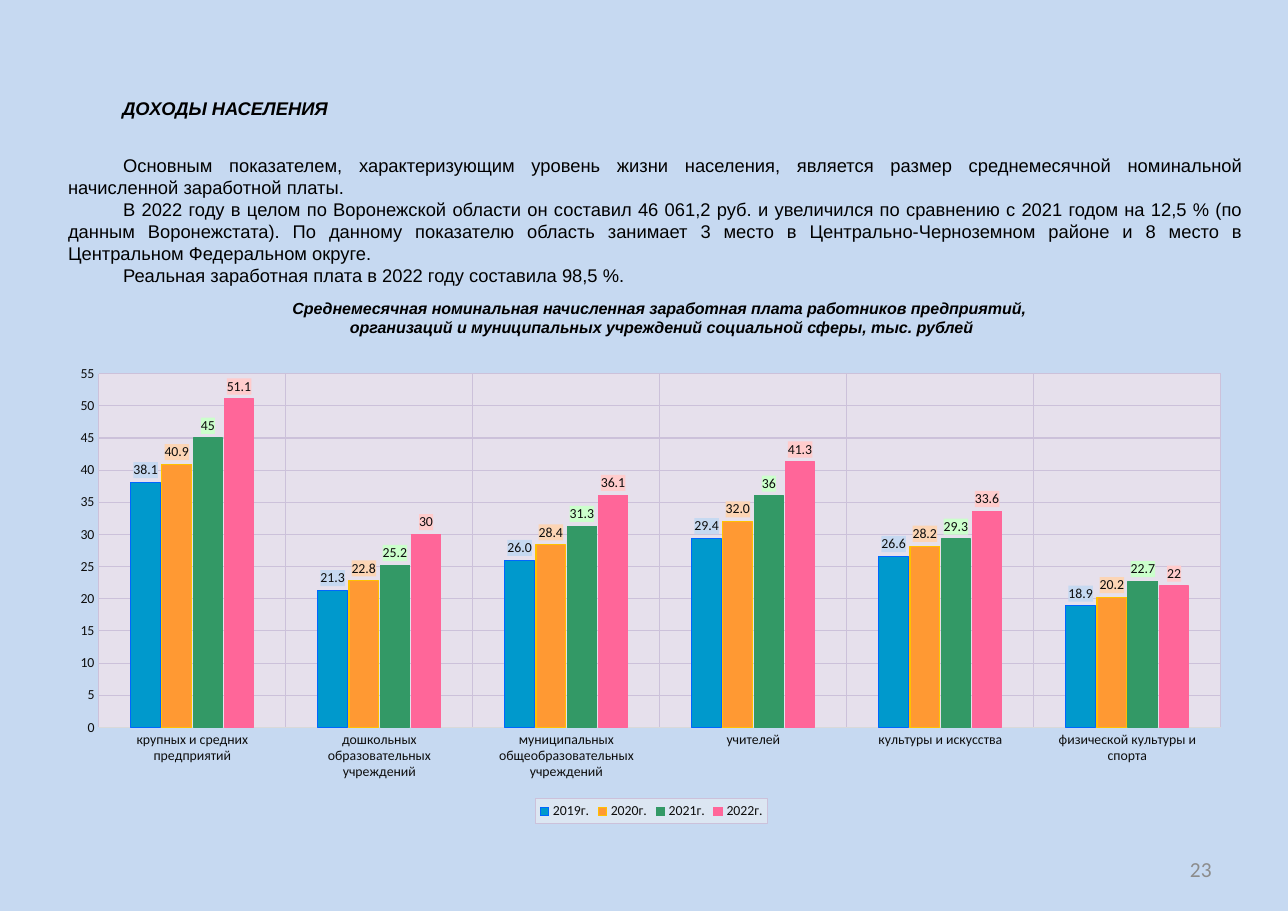
from lxml.etree import SubElement
from pptx import Presentation
from pptx.chart.data import CategoryChartData
from pptx.dml.color import RGBColor
from pptx.enum.chart import XL_CHART_TYPE, XL_LABEL_POSITION, XL_LEGEND_POSITION, XL_TICK_MARK
from pptx.enum.text import MSO_ANCHOR, MSO_AUTO_SIZE, PP_ALIGN
from pptx.oxml import parse_xml
from pptx.oxml.ns import nsdecls, qn
from pptx.util import Cm, Pt

GRID = "CCC1DA"
HEADING = "ДОХОДЫ НАСЕЛЕНИЯ"
BODY = [
    "Основным показателем, характеризующим уровень жизни населения, является размер "
    "среднемесячной номинальной начисленной заработной платы.",
    "В 2022 году в целом по Воронежской области он составил 46 061,2 руб. и увеличился "
    "по сравнению с 2021 годом на 12,5 % (по данным Воронежстата). По данному показателю "
    "область занимает 3 место в Центрально-Черноземном районе и 8 место в Центральном "
    "Федеральном округе.",
    "Реальная заработная плата в 2022 году составила 98,5 %.",
]
CHART_TITLE = [
    "Среднемесячная номинальная начисленная заработная плата работников предприятий, ",
    "организаций и муниципальных учреждений социальной сферы, тыс. рублей",
]
WORKER_GROUPS = [
    "крупных и средних предприятий",
    "дошкольных образовательных учреждений",
    "муниципальных общеобразовательных учреждений",
    "учителей",
    "культуры и искусства",
    "физической культуры и спорта",
]
YEARS = [
    ("2019г.", [38.1, 21.3, 26, 29.4, 26.6, 18.9], "0099CC", "0066FF", "C6D9F1", "0.0"),
    ("2020г.", [40.9, 22.8, 28.4, 32, 28.2, 20.2], "FF9933", "FFC000", "FCD5B5", "0.0"),
    ("2021г.", [45, 25.2, 31.3, 36, 29.3, 22.7], "339966", "339966", "CCFFCC", "General"),
    ("2022г.", [51.1, 30, 36.1, 41.3, 33.6, 22], "FF6699", "FF6699", "FFCCCC", "General"),
]


def rgb(value):
    """Turn a hex string into a colour."""
    return RGBColor.from_string(value)


def set_values(target, values):
    """Set every attribute named in a dict."""
    for name, value in values.items():
        setattr(target, name, value)


def set_font(font, size, color, face, **style):
    """Give a font its size, colour, face and style."""
    set_values(font, {"size": Pt(size), "name": face, **style})
    font.color.rgb = rgb(color)


def set_line(line, color):
    """Draw a thin line in one colour."""
    line.color.rgb = rgb(color)
    line.width = Pt(0.75)


def add_text(slide, box, paragraphs, size, color="000000", face="Arial",
             align=PP_ALIGN.LEFT, indent=0, frame=None, **style):
    """Add a text box with one paragraph per string."""
    text = slide.shapes.add_textbox(*map(Cm, box)).text_frame
    set_values(text, {"word_wrap": True, **(frame or {})})
    text.text = "\n".join(paragraphs)
    for paragraph in text.paragraphs:
        paragraph.alignment = align
        paragraph._p.get_or_add_pPr().set("indent", str(Cm(indent)))
        set_font(paragraph.runs[0].font, size, color, face, **style)


def paint(part, fill, line=None):
    """Fill a chart part that has no public format object."""
    outline = (f'<a:ln w="{Pt(0.75)}"><a:solidFill><a:srgbClr val="{line}"/></a:solidFill></a:ln>'
               if line else "")
    shape_format = parse_xml(
        f'<c:spPr {nsdecls("c", "a")}><a:solidFill><a:srgbClr val="{fill}"/></a:solidFill>'
        f"{outline}</c:spPr>")
    text_format = part.find(qn("c:txPr"))
    if text_format is None:
        part.append(shape_format)
    else:
        text_format.addprevious(shape_format)


def place_plot(plot_area, **position):
    """Fix the inner plot area as fractions of the chart."""
    for automatic in plot_area.findall(qn("c:layout")):
        plot_area.remove(automatic)
    layout = parse_xml(f'<c:layout {nsdecls("c")}/>')
    manual = SubElement(layout, qn("c:manualLayout"))
    settings = {"layoutTarget": "inner", "xMode": "edge", "yMode": "edge", **position}
    for name, value in settings.items():
        SubElement(manual, qn(f"c:{name}")).set("val", str(value))
    plot_area.insert(0, layout)


def format_axes(chart):
    """Style both axes and their gridlines."""
    for axis in (chart.category_axis, chart.value_axis):
        set_values(axis, {"has_major_gridlines": True, "major_tick_mark": XL_TICK_MARK.NONE,
                          "minor_tick_mark": XL_TICK_MARK.NONE})
        set_line(axis.major_gridlines.format.line, GRID)
        set_font(axis.tick_labels.font, 9, "0D0D0D", "Calibri")
    set_line(chart.category_axis.format.line, "D9D9D9")
    wages = chart.value_axis
    set_values(wages, {"minimum_scale": 0, "maximum_scale": 55, "major_unit": 5})
    set_values(wages.tick_labels, {"number_format": "0", "number_format_is_linked": False})
    wages.format.line.fill.background()


def format_years(chart):
    """Colour the bars and labels of each year."""
    for series, (_, _, fill, line, label_fill, number_format) in zip(chart.plots[0].series, YEARS):
        series.format.fill.solid()
        series.format.fill.fore_color.rgb = rgb(fill)
        set_line(series.format.line, line)
        labels = series.data_labels
        set_values(labels, {"show_value": True, "position": XL_LABEL_POSITION.OUTSIDE_END,
                            "number_format": number_format, "number_format_is_linked": False})
        set_font(labels.font, 9, "0D0D0D", "Calibri")
        paint(labels._element, label_fill)


def add_wage_chart(slide, box):
    """Add the clustered columns of wages by year."""
    wages = CategoryChartData()
    wages.categories = WORKER_GROUPS
    for year, values, *_ in YEARS:
        wages.add_series(year, values)
    chart = slide.shapes.add_chart(XL_CHART_TYPE.COLUMN_CLUSTERED, *map(Cm, box), wages).chart
    set_values(chart, {"has_title": False, "has_legend": True})
    set_font(chart.font, 10, "000000", "Calibri")
    set_values(chart.plots[0], {"gap_width": 216, "overlap": -5, "vary_by_categories": False})
    set_values(chart.legend, {"position": XL_LEGEND_POSITION.BOTTOM, "include_in_layout": False})
    set_font(chart.legend.font, 9, "0D0D0D", "Calibri")
    format_axes(chart)
    format_years(chart)
    plot_area = chart.element.xpath(".//c:plotArea")[0]
    place_plot(plot_area, x=0.035, y=0.036, w=0.944, h=0.758)
    paint(plot_area, "E6E0EC")
    paint(chart.element.xpath(".//c:legend")[0], "DCE6F2", GRID)


def main():
    """Build and save the slide on incomes."""
    presentation = Presentation()
    set_values(presentation, {"slide_width": Cm(29.7), "slide_height": Cm(21)})
    slide = presentation.slides.add_slide(presentation.slide_layouts[6])
    slide.background.fill.solid()
    slide.background.fill.fore_color.rgb = rgb("C6D9F1")

    middle = {"vertical_anchor": MSO_ANCHOR.MIDDLE}
    grow = {"auto_size": MSO_AUTO_SIZE.SHAPE_TO_FIT_TEXT}
    add_text(slide, (21.29, 19.46, 6.93, 1.12), ["23"], 14, "8C8C8C", "Calibri",
             PP_ALIGN.RIGHT, frame={**middle, "margin_right": Cm(0.28)})
    add_text(slide, (1.32, 2.11, 27.86, 0.76), [HEADING], 12, indent=1.25,
             frame={**middle, **grow}, bold=True, italic=True)
    add_text(slide, (1.32, 3.43, 27.61, 3.84), BODY, 12, align=PP_ALIGN.JUSTIFY,
             indent=1.27, frame=grow)
    add_wage_chart(slide, (1.32, 8.23, 27.41, 10.77))
    add_text(slide, (3.86, 6.76, 22.81, 1.14), CHART_TITLE, 10.5, align=PP_ALIGN.CENTER,
             frame=grow, bold=True, italic=True)
    presentation.save("out.pptx")


if __name__ == "__main__":
    main()
